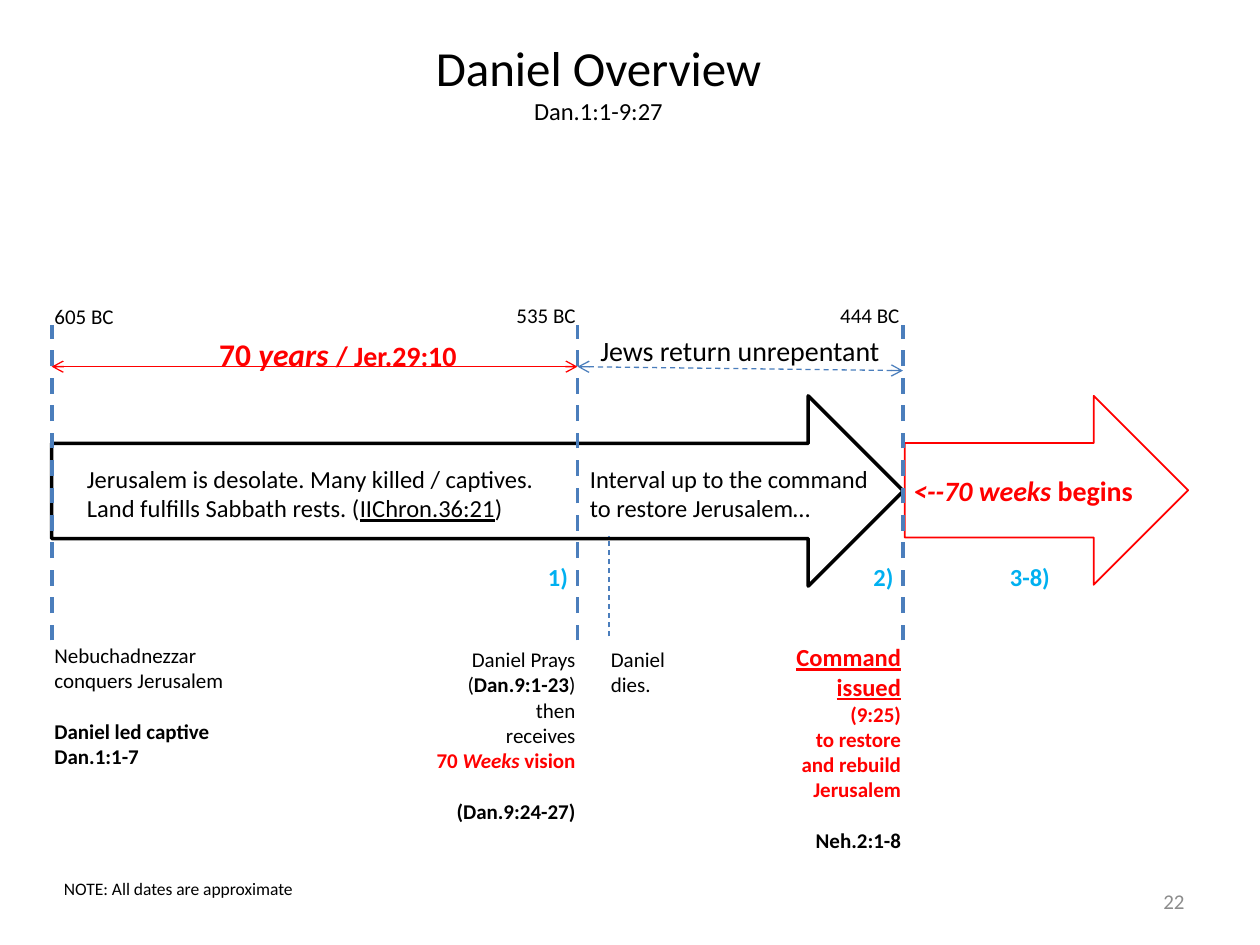
from dataclasses import dataclass

from lxml.etree import SubElement
from pptx import Presentation
from pptx.dml.color import RGBColor
from pptx.enum.dml import MSO_LINE
from pptx.enum.shapes import MSO_CONNECTOR, MSO_SHAPE
from pptx.enum.text import MSO_ANCHOR, PP_ALIGN
from pptx.oxml.ns import qn
from pptx.util import Inches, Pt


@dataclass(frozen=True)
class Theme:
    font: str = "Calibri"
    ink: str = "000000"
    red: str = "FF0000"
    blue: str = "4B7EBC"
    step: str = "00B0F0"
    muted: str = "8C8C8C"
    title: int = 28
    lead: int = 18
    large: int = 16
    body: int = 14
    small: int = 12
    note: int = 10


theme = Theme()
deck = Presentation()
deck.slide_width, deck.slide_height = Inches(10), Inches(7.5)
page = deck.slides.add_slide(deck.slide_layouts[6])

# The page is a grid of 120 columns and 90 rows of square cells.
cell = deck.slide_width / 120
captivity, prayer, death, command = 4.92, 55, 58, 86
top, bottom, span_row = 31, 61, 34.92
RIGHT, CENTER = PP_ALIGN.RIGHT, PP_ALIGN.CENTER


def write(text, place, size=theme.small, color=theme.ink, bold=False,
          align=PP_ALIGN.LEFT, wrap=True, anchor=MSO_ANCHOR.TOP, gap_before=None):
    """Add a box at place (column, row, columns, rows).

    text is a list of paragraphs, each a list of spans: a string, or a string
    with the format that differs. gap_before is the paragraph set off by a line.
    """
    box = page.shapes.add_textbox(*(round(n * cell) for n in place))
    frame = box.text_frame
    frame.word_wrap, frame.vertical_anchor = wrap, anchor
    for index, spans in enumerate(text):
        para = frame.paragraphs[0] if index == 0 else frame.add_paragraph()
        para.alignment = align
        if index == gap_before:
            para.space_before = Pt(1.22 * theme.small)
        for item in spans:
            words, change = (item, {}) if isinstance(item, str) else item
            span = para.add_run()
            span.text = words
            font = span.font
            font.name = theme.font
            font.size = Pt(change.get("size", size))
            font.bold = change.get("bold", bold)
            font.italic = change.get("italic", False)
            font.underline = change.get("underline", False)
            font.color.rgb = RGBColor.from_string(change.get("color", color))


def connect(start, end, color=theme.blue, width=0.75, dashed=True, arrows=False):
    points = (round(n * cell) for n in (*start, *end))
    line = page.shapes.add_connector(MSO_CONNECTOR.STRAIGHT, *points)
    line.line.color.rgb = RGBColor.from_string(color)
    line.line.width = Pt(width)
    if dashed:
        line.line.dash_style = MSO_LINE.DASH
    if arrows:
        for tag in ("a:headEnd", "a:tailEnd"):
            SubElement(line.line._get_or_add_ln(), qn(tag), type="arrow")
    SubElement(line._element.spPr, qn("a:effectLst"))


write([["Daniel Overview"], [("Dan.1:1-9:27", {"size": theme.body})]],
      (38, 3, 38, 9.75), size=theme.title, align=CENTER)

# Block arrows of the two periods
for left, width, height, color, weight in [
    (captivity, 81.12, 18.12, theme.ink, 2),
    (86.16, 27, 18, theme.red, 1),
]:
    arrow = page.shapes.add_shape(
        MSO_SHAPE.RIGHT_ARROW, *(round(n * cell) for n in (left, 37.7, width, height)))
    arrow.shadow.inherit = False
    arrow.fill.background()
    arrow.line.color.rgb = RGBColor.from_string(color)
    arrow.line.width = Pt(weight)

# Time marks and spans between them
for column in (captivity, prayer, command):
    connect((column, bottom), (column, top), width=2.25)
connect((death, 60.6), (death, bottom - 10))
connect((captivity, span_row), (prayer, span_row), color=theme.red, dashed=False, arrows=True)
connect((prayer, span_row), (command, 35.3), arrows=True)

for date, column, row in [("605 BC", 4, 28.35), ("535 BC", 48, 28.2), ("444 BC", 78.84, 28.2)]:
    write([[date]], (column, row, 8.16, 3.6), wrap=False)
write([["70 ", ("years ", {"italic": True}), ("/ Jer.29:10", {"size": theme.large})]],
      (19.7, 31.3, 25.7, 4.8), size=theme.lead, color=theme.red, bold=True)
write([["Jews return unrepentant"]], (56, 31.2, 29.8, 4.4), size=theme.large)

# Words inside the arrows
write([["Jerusalem is desolate. Many killed / captives."],
       ["Land fulfills Sabbath rests. (", ("IIChron.36:21", {"underline": True}), ")"]],
      (7.1, 43.6, 45.8, 6.8), size=theme.body)
write([["Interval up to the command"], ["to restore Jerusalem…"]],
      (prayer, 43.6, 30, 6.8), size=theme.body)
write([[("<--70 weeks ", {"italic": True}), "begins"]],
      (85.8, 44.5, 24, 4.4), size=theme.large, color=theme.red, bold=True)

for label, column, width in [("1)", 51, 5), ("2)", 82, 5), ("3-8)", 95, 7)]:
    write([[label]], (column, 52.9, width, 4), size=theme.body, color=theme.step, bold=True)

# Events under the marks
strong = {"bold": True}
write([["Nebuchadnezzar conquers Jerusalem"],
       [("Daniel led captive", strong)], [("Dan.1:1-7", strong)]],
      (4, 60.6, 19, 13.3), gap_before=1)
vision = {"bold": True, "color": theme.red}
write([["Daniel Prays"], ["(", ("Dan.9:1-23", strong), ")"], [" then"], ["receives"],
       [("70 ", vision), ("Weeks ", {**vision, "italic": True}), ("vision", vision)],
       [("(Dan.9:24-27)", strong)]],
      (39, bottom, 17, 18.1), align=RIGHT, gap_before=5)
write([["Daniel"], ["dies."]], (57, bottom, 11, 6))
write([[("Command issued", {"size": theme.body, "underline": True})], ["(9:25)"],
       [" to restore and rebuild Jerusalem"], [("Neh.2:1-8", {"color": theme.ink})]],
      (74, 60.6, 13, 21.4), color=theme.red, bold=True, align=RIGHT, gap_before=3)

write([["NOTE: All dates are approximate"]], (captivity, 83, 25.2, 3.2), size=theme.note)
write([["22"]], (command, 83.4, 28, 4.8), color=theme.muted, align=RIGHT,
      anchor=MSO_ANCHOR.MIDDLE)

deck.save("out.pptx")
